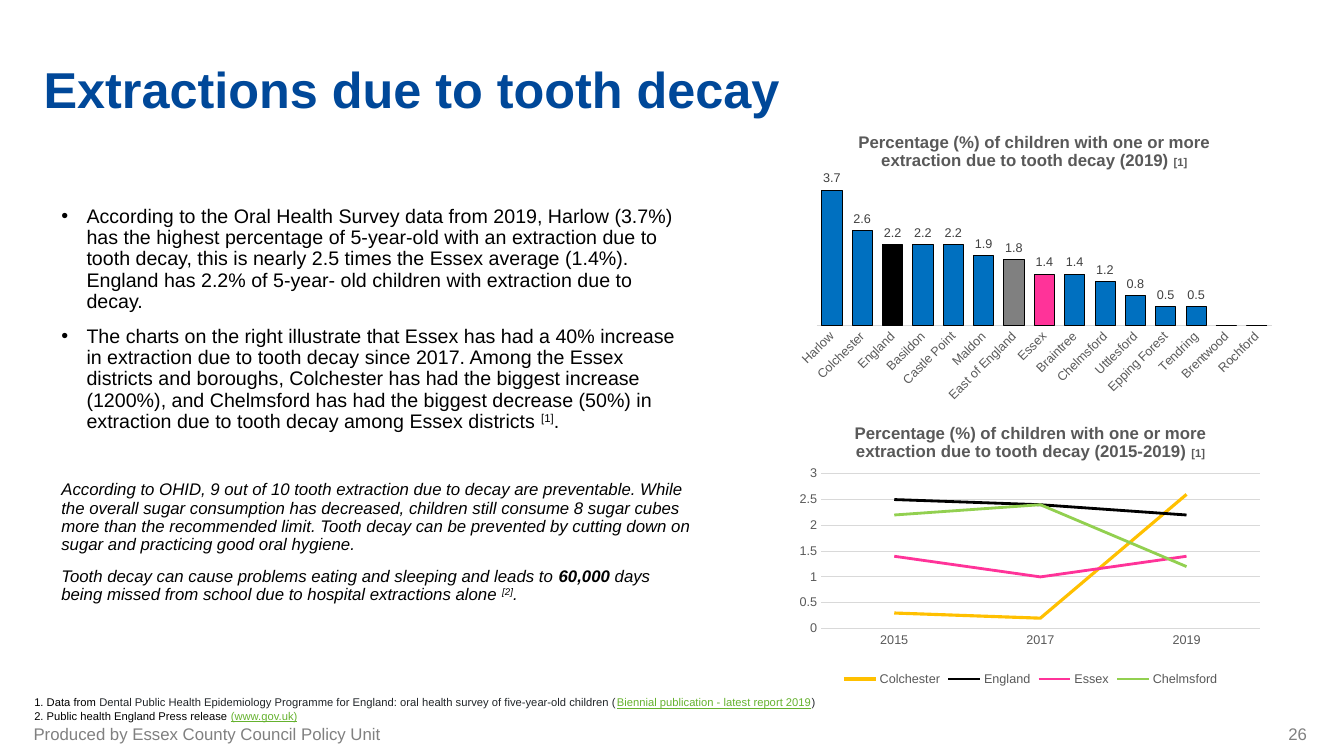
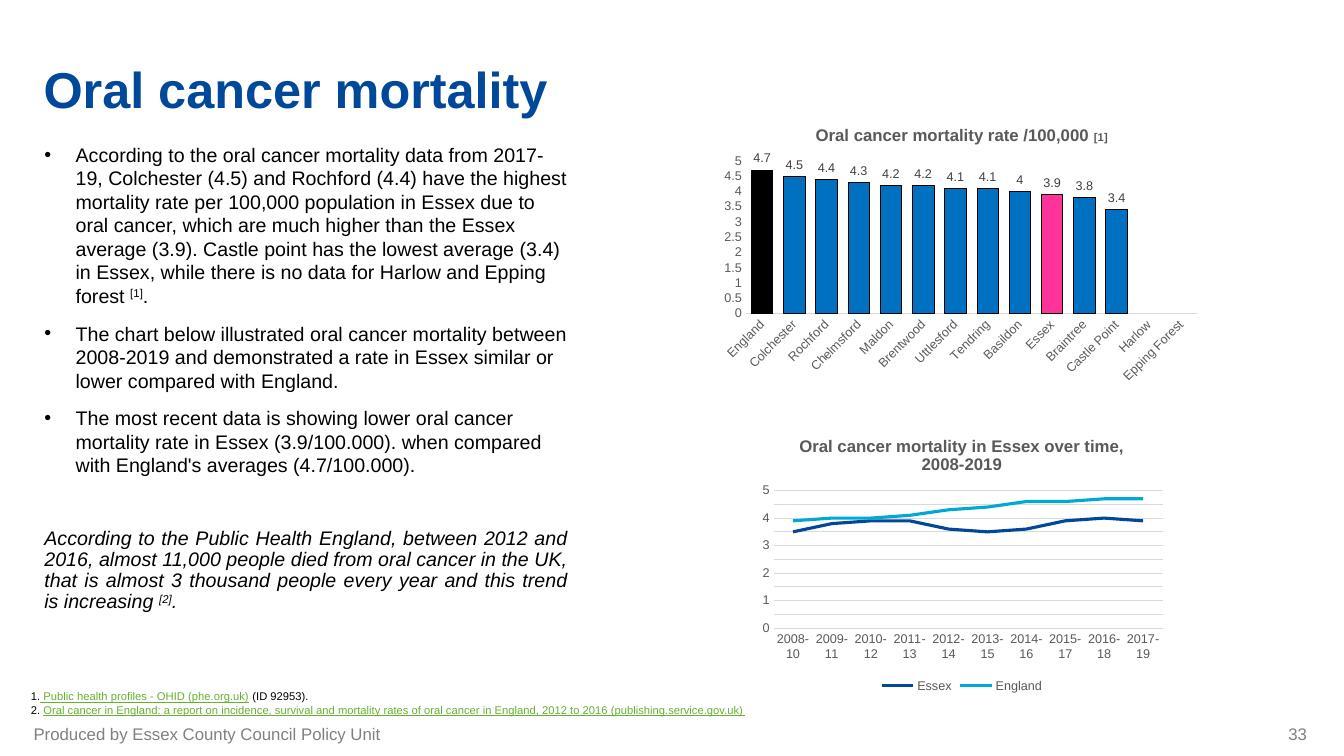
from lxml.etree import SubElement as Sub
from pptx import Presentation
from pptx.chart.data import CategoryChartData as Data
from pptx.dml.color import RGBColor as Rgb
from pptx.enum.chart import (XL_CHART_TYPE as Kind, XL_LABEL_POSITION as Spot,
                             XL_LEGEND_POSITION as Side, XL_MARKER_STYLE as Mark,
                             XL_TICK_MARK as Tick)
from pptx.enum.text import MSO_ANCHOR as Anchor, PP_ALIGN as Align
from pptx.oxml.ns import qn
from pptx.util import Inches, Pt

WIDE, HIGH = Inches(13.33), Inches(7.5)
COLS, ROWS = 160, 90
FONT = "Arial"
HUES = {
    "title": "004899", "text": "000000", "foot": "808080", "note": "212529",
    "link": "65B22E", "axis": "595959", "rule": "D9D9D9", "label": "404040",
    "bar": "0070C0", "black": "000000", "grey": "808080", "pink": "FF3399",
    "gold": "FFC000", "green": "92D050", "navy": "004899", "sky": "00A8D6",
}
LINK = {"hue": "link", "under": True}
NOTE = {"hue": "note"}
SUP = {"sup": True}
FOOT = "Produced by Essex County Council Policy Unit"


def hue(name):
    return Rgb.from_string(HUES[name])


def style(font, size, name, bold=None):
    font.name, font.size, font.bold = FONT, Pt(size), bold
    font.color.rgb = hue(name)


class Deck:
    """Holds the style and the slide being built; boxes are in grid cells."""

    def __init__(self):
        self.prs = Presentation()
        self.prs.slide_width, self.prs.slide_height = WIDE, HIGH
        self.slide = None

    def cells(self, box):
        x, y, w, h = box
        return (int(x * WIDE / COLS), int(y * HIGH / ROWS),
                int(w * WIDE / COLS), int(h * HIGH / ROWS))

    def page(self, title, num):
        self.slide = self.prs.slides.add_slide(self.prs.slide_layouts[6])
        head = self.text((4, 3.4, 151.6, 10.8), Anchor.BOTTOM, (0.1, 0.05, 0.1, 0))
        self.para(head, [(title, {"bold": True})], 36, "title", lead=0.9)
        foot = self.text((4, 86.5, 75.6, 1.8), Anchor.MIDDLE, (0, 0.05, 0.1, 0.05))
        self.para(foot, [FOOT], 12, "foot")
        mark = self.text((145.4, 86.5, 10.2, 1.8), Anchor.MIDDLE, (0.1, 0.05, 0, 0.05))
        self.para(mark, [str(num)], 12, "foot", align=Align.RIGHT)

    def text(self, box, anchor=Anchor.TOP, pad=(0.1, 0.05, 0.1, 0.05)):
        frame = self.slide.shapes.add_textbox(*self.cells(box)).text_frame
        frame.word_wrap, frame.vertical_anchor = True, anchor
        (frame.margin_left, frame.margin_top,
         frame.margin_right, frame.margin_bottom) = map(Inches, pad)
        return frame

    def para(self, frame, runs, size=14, color="text", lead=None, gap=0,
             left=0, hang=0, align=None, slant=False):
        """Add a paragraph; a positive hang gives it a bullet."""
        par = frame.paragraphs[0]
        if par.runs:
            par = frame.add_paragraph()
        par.alignment, par.space_before = align, Pt(gap)
        if lead:
            par.line_spacing = lead
        props = par._p.get_or_add_pPr()
        props.set("marL", str(Inches(left)))
        props.set("indent", str(-Inches(hang)))
        if hang:
            Sub(props, qn("a:buFont")).set("typeface", FONT)
            Sub(props, qn("a:buChar")).set("char", "•")
        for item in runs:
            words, look = (item, {}) if isinstance(item, str) else item
            run = par.add_run()
            run.text = words
            style(run.font, size, look.get("hue", color), look.get("bold"))
            run.font.italic = slant
            run.font.underline = look.get("under")
            if look.get("sup"):
                run.font._element.set("baseline", "30000")

    def notes(self, box, paras):
        frame = self.text(box)
        for runs in paras:
            self.para(frame, runs, 8)

    def chart(self, kind, box, title, cats, rows, plot, top, step):
        """Add a chart; title is a list of lines, each a list of (text, size)."""
        data = Data()
        data.categories = cats
        for name, vals in rows:
            data.add_series(name, vals)
        chart = self.slide.shapes.add_chart(kind, *self.cells(box), data).chart
        style(chart.font, 10, "text")
        frame = chart.chart_title.text_frame
        for i, line in enumerate(title):
            par = frame.add_paragraph() if i else frame.paragraphs[0]
            for words, size in line:
                run = par.add_run()
                run.text = words
                style(run.font, size, "axis", True)
        chart.chart_title.include_in_layout = False
        chart.has_legend = False
        for axis in (chart.category_axis, chart.value_axis):
            axis.major_tick_mark = axis.minor_tick_mark = Tick.NONE
            style(axis.tick_labels.font, 9, "axis")
        self.rule(chart.category_axis.format.line)
        worth = chart.value_axis
        worth.format.line.fill.background()
        worth.has_major_gridlines = False
        worth.minimum_scale, worth.maximum_scale, worth.major_unit = 0, top, step
        self.lay(chart, plot)
        return chart

    def rule(self, line):
        line.color.rgb, line.width = hue("rule"), Pt(0.75)

    def lay(self, chart, plot):
        """Place the inner plot area, as shares of the chart."""
        area = chart._chartSpace.chart.plotArea
        old = area.find(qn("c:layout"))
        if old is not None:
            area.remove(old)
        lay = Sub(area, qn("c:layout"))
        area.insert(0, lay)
        spot = Sub(lay, qn("c:manualLayout"))
        pairs = [("layoutTarget", "inner"), ("xMode", "edge"), ("yMode", "edge"),
                 *zip("xywh", plot)]
        for tag, val in pairs:
            Sub(spot, qn("c:" + tag)).set("val", str(val))

    def turn(self, chart, angle):
        body = chart.category_axis._element.find(qn("c:txPr")).find(qn("a:bodyPr"))
        body.set("rot", str(angle * 60000))
        body.set("vert", "horz")

    def bars(self, box, title, cats, vals, marks, plot, top, step, form, scale=True):
        chart = self.chart(Kind.COLUMN_CLUSTERED, box, title, cats,
                           [("Series 1", vals)], plot, top, step)
        chart.value_axis.visible = scale
        self.turn(chart, -45)
        group = chart.plots[0]
        group.gap_width, group.overlap, group.vary_by_categories = 50, -27, False
        group.has_data_labels = True
        tags = group.data_labels
        tags.show_value, tags.position = True, Spot.OUTSIDE_END
        tags.number_format, tags.number_format_is_linked = form, False
        style(tags.font, 9, "label")
        row = group.series[0]
        row.invert_if_negative = False
        self.paint(row.format, "bar")
        for name, color in marks.items():
            self.paint(row.points[cats.index(name)].format, color)

    def paint(self, look, color):
        look.fill.solid()
        look.fill.fore_color.rgb = hue(color)
        look.line.color.rgb, look.line.width = hue("black"), Pt(0.5)

    def lines(self, box, title, cats, rows, plot, top, step):
        """Add a line chart; rows are (name, colour, width, values)."""
        chart = self.chart(Kind.LINE, box, title, cats,
                           [(name, vals) for name, _, _, vals in rows], plot, top, step)
        self.turn(chart, 0)
        self.rule(chart.value_axis.major_gridlines.format.line)
        chart.has_legend = True
        chart.legend.position, chart.legend.include_in_layout = Side.BOTTOM, False
        style(chart.legend.font, 9, "axis")
        chart.plots[0].vary_by_categories = False
        for row, (_, color, width, _) in zip(chart.plots[0].series, rows):
            row.smooth, row.marker.style = False, Mark.NONE
            row.format.line.color.rgb, row.format.line.width = hue(color), Pt(width)


def decay(deck):
    deck.page("Extractions due to tooth decay", 26)
    body = deck.text((5.4, 24, 78.4, 60))
    item = {"lead": 0.9, "gap": 10, "left": 0.31, "hang": 0.25}
    deck.para(body, [
        "According to the Oral Health Survey data from 2019, Harlow (3.7%) has the "
        "highest percentage of 5-year-old with an extraction due to tooth decay, this "
        "is nearly 2.5 times the Essex average (1.4%). England has 2.2% of 5-year- old "
        "children with extraction due to decay."], **{**item, "gap": 0})
    deck.para(body, [
        "The charts on the right illustrate that Essex has had a 40% increase in "
        "extraction due to tooth decay since 2017. Among the Essex districts and "
        "boroughs, Colchester has had the biggest increase (1200%), and Chelmsford has "
        "had the biggest decrease (50%) in extraction due to tooth decay among Essex "
        "districts ", ("[1]", SUP), "."], **item)
    aside = {"size": 12, "lead": 0.9, "left": 0.06, "slant": True}
    deck.para(body, [
        "According to OHID, 9 out of 10 tooth extraction due to decay are preventable. "
        "While the overall sugar consumption has decreased, children still consume 8 "
        "sugar cubes more than the recommended limit. Tooth decay can be prevented by "
        "cutting down on sugar and practicing good oral hygiene."], gap=35, **aside)
    deck.para(body, [
        "Tooth decay can cause problems eating and sleeping and leads to ",
        ("60,000", {"bold": True}),
        " days being missed from school due to hospital extractions alone ",
        ("[2]", SUP), "."], gap=10, **aside)

    lead = "Percentage (%) of children with one or more extraction due to tooth decay "
    deck.bars((93.7, 14, 58.9, 34.8), [[(lead + "(2019) ", 12), ("[1]", 8)]],
              ["Harlow", "Colchester", "England", "Basildon", "Castle Point", "Maldon",
               "East of England", "Essex", "Braintree", "Chelmsford", "Uttlesford",
               "Epping Forest", "Tendring", "Brentwood", "Rochford"],
              [3.7, 2.6, 2.2, 2.2, 2.2, 1.9, 1.8, 1.4, 1.4, 1.2, 0.8, 0.5, 0.5, 0, 0],
              {"England": "black", "East of England": "grey", "Essex": "pink"},
              (0.06, 0.21, 0.92, 0.5), 4, 0.5, "0.0;;", scale=False)
    deck.lines((93.7, 48.7, 58, 33.5), [[(lead + "(2015-2019) ", 12), ("[1]", 8)]],
               ["2015", "2017", "2019"],
               [("Colchester", "gold", 2.25, [0.3, 0.2, 2.6]),
                ("England", "black", 2, [2.5, 2.4, 2.2]),
                ("Essex", "pink", 2, [1.4, 1, 1.4]),
                ("Chelmsford", "green", 2, [2.2, 2.4, 1.2])],
               (0.07, 0.23, 0.9, 0.55), 3, 0.5)
    deck.notes((2.9, 82.2, 98.2, 4.4), [
        ["1. Data from ",
         ("Dental Public Health Epidemiology Programme for England: oral health survey "
          "of five-year-old children (", NOTE),
         ("Biennial publication - latest report 2019", LINK), (")", NOTE)],
        ["2. Public health England Press release ", ("(www.gov.uk)", LINK)]])


def cancer(deck):
    deck.page("Oral cancer mortality", 33)
    body = deck.text((4.1, 16.4, 64.7, 64.6))
    items = [
        ["According to the oral cancer mortality data from 2017-19, Colchester (4.5) and "
         "Rochford (4.4) have the highest mortality rate per 100,000 population in Essex "
         "due to oral cancer, which are much higher than the Essex average (3.9). Castle "
         "point has the lowest average (3.4) in Essex, while there is no data for Harlow "
         "and Epping forest ", ("[1]", SUP), "."],
        ["The chart below illustrated oral cancer mortality between 2008-2019 and "
         "demonstrated a rate in Essex similar or lower compared with England."],
        ["The most recent data is showing lower oral cancer mortality rate in Essex "
         "(3.9/100.000). when compared with England's averages (4.7/100.000)."]]
    for i, runs in enumerate(items):
        deck.para(body, runs, gap=10 if i else 0, left=0.31, hang=0.31)
    deck.para(body, [
        "According to the Public Health England, between 2012 and 2016, almost 11,000 "
        "people died from oral cancer in the UK, that is almost 3 thousand people every "
        "year and this trend is increasing ", ("[2]", SUP), "."],
        lead=0.9, gap=37, align=Align.JUSTIFY, slant=True)

    deck.bars((85.3, 13.2, 58.4, 33.1),
              [[("Oral cancer mortality rate /100,000 ", 12), ("[1]", 8)]],
              ["England", "Colchester", "Rochford", "Chelmsford", "Maldon", "Brentwood",
               "Uttlesford", "Tendring", "Basildon", "Essex", "Braintree",
               "Castle Point", "Harlow", "Epping Forest"],
              [4.7, 4.5, 4.4, 4.3, 4.2, 4.2, 4.1, 4.1, 4, 3.9, 3.8, 3.4, None, None],
              {"England": "black", "Essex": "pink"},
              (0.06, 0.18, 0.92, 0.55), 5, 0.5, "General")
    deck.lines((89.6, 50.2, 49.8, 32.8),
               [[("Oral cancer mortality in Essex over time,", 12)], [("2008-2019", 12)]],
               [f"{year}-{year - 1998}" for year in range(2008, 2018)],
               [("Essex", "navy", 2.25,
                 [3.5, 3.8, 3.9, 3.9, 3.6, 3.5, 3.6, 3.9, 4, 3.9]),
                ("England", "sky", 2.25,
                 [3.9, 4, 4, 4.1, 4.3, 4.4, 4.6, 4.6, 4.7, 4.7])],
               (0.05, 0.25, 0.93, 0.5), 5, 0.5)
    deck.notes((2.5, 81.5, 90.2, 4.4), [
        ["1.", (" Public health profiles - OHID (phe.org.uk)", LINK), " (ID 92953)."],
        ["2. ", ("Oral cancer in England: a report on incidence, survival and mortality "
                 "rates of oral cancer in England, 2012 to 2016 "
                 "(publishing.service.gov.uk)", LINK)]])


def main():
    deck = Deck()
    decay(deck)
    cancer(deck)
    deck.prs.save("out.pptx")


if __name__ == "__main__":
    main()
